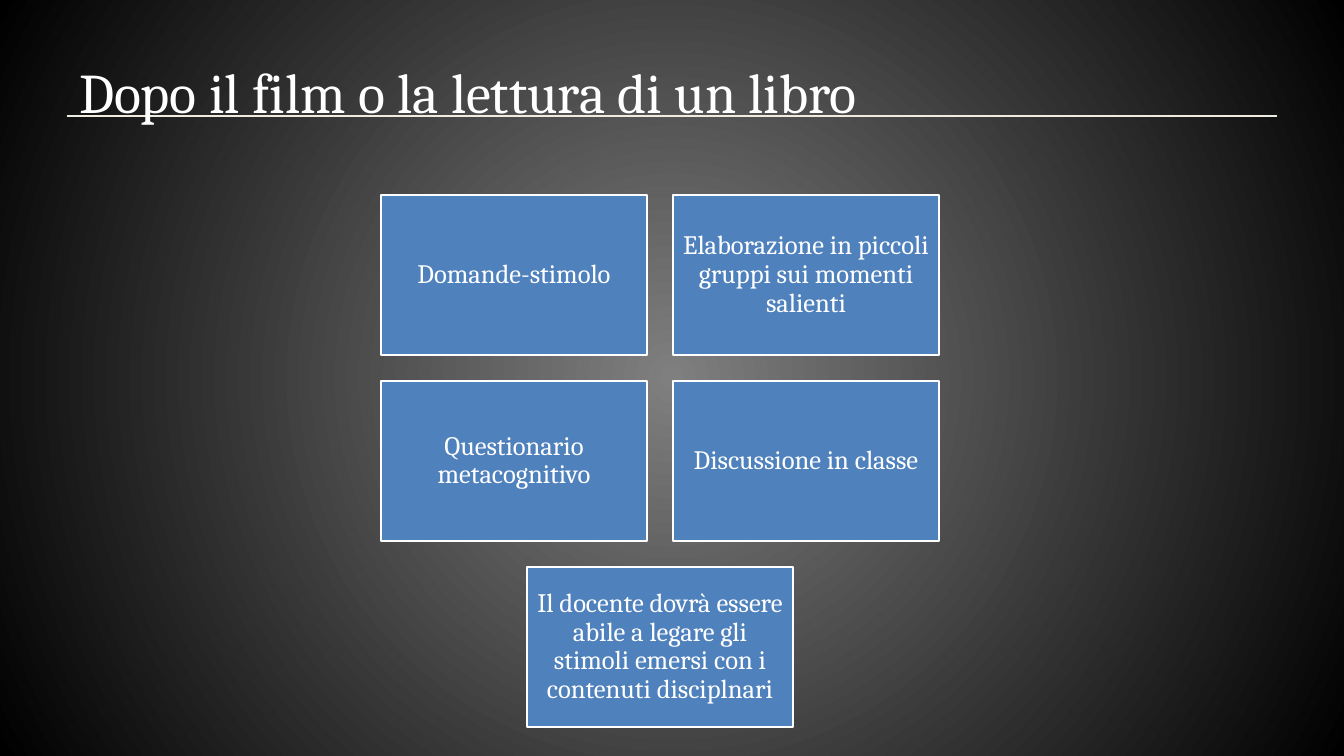
from pptx import Presentation
from pptx.dml.color import RGBColor
from pptx.enum.shapes import MSO_CONNECTOR, MSO_SHAPE
from pptx.enum.text import MSO_ANCHOR, MSO_AUTO_SIZE, PP_ALIGN
from pptx.oxml import parse_xml
from pptx.oxml.ns import nsdecls, qn
from pptx.util import Emu, Pt

RECT, LINE = MSO_SHAPE.RECTANGLE, MSO_CONNECTOR.STRAIGHT
LEFT, MID = PP_ALIGN.LEFT, PP_ALIGN.CENTER
TOP, CENTER = MSO_ANCHOR.TOP, MSO_ANCHOR.MIDDLE
FIT = MSO_AUTO_SIZE.SHAPE_TO_FIT_TEXT

# Content
TITLE = "Dopo il film o la lettura di un libro"
ROWS = [
    ["Domande-stimolo", "Elaborazione in piccoli gruppi sui momenti salienti"],
    ["Questionario metacognitivo", "Discussione in classe"],
    ["Il docente dovrà essere abile a legare gli stimoli emersi con i contenuti disciplnari"],
]

# Style and layout
COLORS = {"glow": "7F7F7F", "edge": "000000", "rule": "EEECE1",
          "text": "FFFFFF", "box": "4F81BD"}
FONT = "Cambria"
WIDTH, HEIGHT = 1344, 756
BOX_W, BOX_H, GAP = 266, 160, 26
MID_X, TOP_Y = 660, 195


def px(n):
    return Emu(round(n * 914400 / 100.8))


def rgb(name):
    return RGBColor.from_string(COLORS[name])


def write(frame, text, size, align):
    frame.text = text
    frame.word_wrap = True
    para = frame.paragraphs[0]
    para.alignment = align
    font = para.runs[0].font
    font.name, font.size = FONT, Pt(size)
    font.color.rgb = rgb("text")
    return para


def add_box(slide, text, x, y):
    box = slide.shapes.add_shape(RECT, px(x), px(y), px(BOX_W), px(BOX_H))
    box.shadow.inherit = False
    box.fill.solid()
    box.fill.fore_color.rgb = rgb("box")
    box.line.color.rgb = rgb("text")
    box.line.width = Pt(2)
    frame = box.text_frame
    frame.margin_left = frame.margin_right = px(8)
    frame.margin_top = frame.margin_bottom = px(8)
    frame.vertical_anchor = CENTER
    write(frame, text, 19, MID).line_spacing = 0.9


deck = Presentation()
deck.slide_width, deck.slide_height = px(WIDTH), px(HEIGHT)
slide = deck.slides.add_slide(deck.slide_layouts[5])

# Radial background
fill = slide.background.fill
fill.gradient()
for stop, name, pos in zip(fill.gradient_stops, ("glow", "edge"), (0, 1)):
    stop.color.rgb = rgb(name)
    stop.position = pos
grad = next(slide.element.iter(qn("a:gradFill")))
grad.replace(grad.find(qn("a:lin")), parse_xml(
    f'<a:path {nsdecls("a")} path="circle">'
    '<a:fillToRect l="50000" t="50000" r="50000" b="50000"/></a:path>'))

# Title
title = slide.shapes.title
title.left, title.top, title.width, title.height = map(px, (69, 52, 857, 78))
write(title.text_frame, TITLE, 40, LEFT)
title.text_frame.vertical_anchor = TOP
title.text_frame.auto_size = FIT

# Rule behind the title
rule = slide.shapes.add_connector(LINE, px(67), px(116), px(1277), px(116))
rule.line.color.rgb = rgb("rule")
rule.line.width = Pt(0.75)
rule.element.spPr.append(parse_xml(f'<a:effectLst {nsdecls("a")}/>'))
title.element.addprevious(rule.element)

# Boxes, each row centred
for i, row in enumerate(ROWS):
    start = MID_X - (len(row) * (BOX_W + GAP) - GAP) / 2
    for j, text in enumerate(row):
        add_box(slide, text, start + j * (BOX_W + GAP), TOP_Y + i * (BOX_H + GAP))

deck.save("out.pptx")
